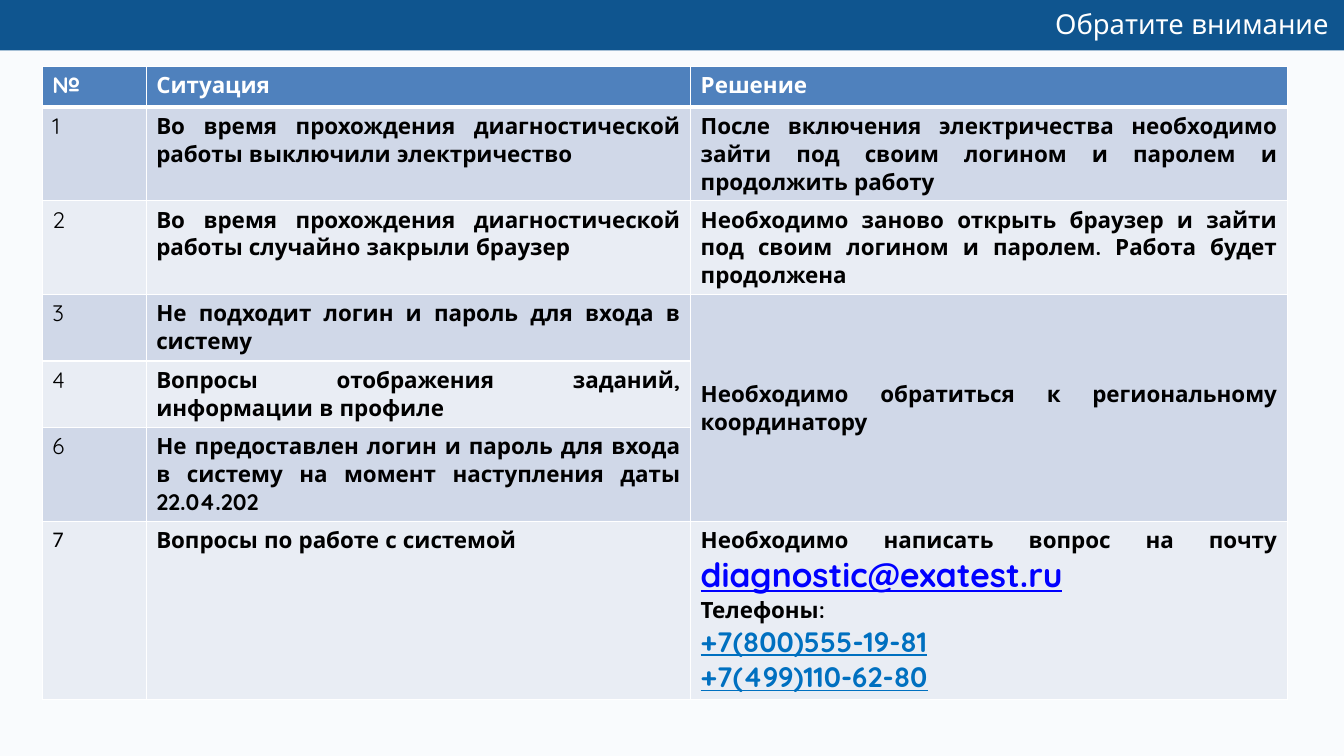
from pptx import Presentation
from pptx.dml.color import RGBColor
from pptx.enum.shapes import MSO_SHAPE
from pptx.enum.text import MSO_ANCHOR, PP_ALIGN
from pptx.oxml import parse_xml
from pptx.oxml.ns import nsdecls
from pptx.util import Inches, Pt

FONT = "Quicksand"
BLACK, WHITE = "000000", "FFFFFF"
HEADER_FILL, ODD_FILL, EVEN_FILL = "4F81BD", "D0D8E8", "E9EDF4"

# Content
heading = "Обратите внимание"
columns = ["№", "Ситуация", "Решение"]
situations = [
    ("1", "Во время прохождения диагностической работы выключили электричество"),
    ("2", "Во время прохождения диагностической работы случайно закрыли браузер"),
    ("3", "Не подходит логин и пароль для входа в систему"),
    ("4", "Вопросы отображения заданий, информации в профиле"),
    ("6", "Не предоставлен логин и пароль для входа в систему "
          "на момент наступления даты 22.04.202"),
    ("7", "Вопросы по работе с системой"),
]
# Row -> paragraphs of (text, size, colour) runs
solutions = {
    1: [[("После включения электричества необходимо зайти под своим логином "
          "и паролем и продолжить работу", 16, BLACK)]],
    2: [[("Необходимо заново открыть браузер и зайти под своим логином "
          "и паролем. Работа будет продолжена", 16, BLACK)]],
    3: [[("Необходимо обратиться к региональному координатору", 16, BLACK)]],
    6: [[("Необходимо написать вопрос на почту ", 16, BLACK),
         ("diagnostic@exatest.ru", 24, "0000FF")],
        [("Телефоны:", 16, BLACK)],
        [("+7(800)555-19-81", 20, "0070C0")],
        [("+7(499)110-62-80", 20, "0070C0")]],
}
column_widths = [1.03, 5.4, 5.92]
row_heights = [0.4, 0.93, 0.93, 0.66, 0.66, 0.93, 1.76]


def color(hex_string):
    return RGBColor.from_string(hex_string)


def set_borders(cell, bottom=1):
    properties = cell._tc.get_or_add_tcPr()
    for position, side in enumerate("LRTB"):
        width = Pt(bottom if side == "B" else 1)
        properties.insert(position, parse_xml(
            f'<a:ln{side} {nsdecls("a")} w="{width}"><a:solidFill>'
            f'<a:srgbClr val="{WHITE}"/></a:solidFill></a:ln{side}>'))


def write(cell, paragraphs, bold=True, align=PP_ALIGN.JUSTIFY, font=FONT):
    frame = cell.text_frame
    for index, runs in enumerate(paragraphs):
        paragraph = frame.add_paragraph() if index else frame.paragraphs[0]
        paragraph.alignment = align
        paragraph.font.name = font
        paragraph.font.bold = bold
        for text, size, ink in runs:
            run = paragraph.add_run()
            run.text = text
            run.font.size = Pt(size)
            run.font.color.rgb = color(ink)
            if size > 16:  # contacts are underlined
                run.font.underline = True


prs = Presentation()
prs.slide_width, prs.slide_height = Inches(13.33), Inches(7.5)
slide = prs.slides.add_slide(prs.slide_layouts[5])
slide.background.fill.solid()
slide.background.fill.fore_color.rgb = color("F9FBFD")

# Top band, placed behind the title
band = slide.shapes.add_shape(MSO_SHAPE.RECTANGLE, 0, 0, prs.slide_width, Inches(0.5))
band.shadow.inherit = False
band.fill.solid()
band.fill.fore_color.rgb = color("0F558F")
band.line.fill.background()
slide.shapes._spTree.insert(2, band._element)

# Title
title = slide.shapes.title
title.left, title.top = Inches(1.55), Inches(0.04)
title.width, title.height = Inches(11.73), Inches(0.42)
title.text_frame.text = heading
title.text_frame.vertical_anchor = MSO_ANCHOR.MIDDLE
line = title.text_frame.paragraphs[0]
line.alignment = PP_ALIGN.RIGHT
line.line_spacing = 0.9
line.font.name = FONT
line.font.size = Pt(19.6)
line.font.color.rgb = color(WHITE)

# Table grid
table = slide.shapes.add_table(
    len(row_heights), len(columns), Inches(0.42), Inches(0.66),
    Inches(sum(column_widths)), Inches(sum(row_heights))).table
for column, width in zip(table.columns, column_widths):
    column.width = Inches(width)
for row_index, (row, height) in enumerate(zip(table.rows, row_heights)):
    row.height = Inches(height)
    row_fill = ODD_FILL if row_index % 2 else EVEN_FILL
    for cell in row.cells:
        cell.fill.solid()
        cell.fill.fore_color.rgb = color(row_fill if row_index else HEADER_FILL)
        set_borders(cell, bottom=1 if row_index else 3)

# Header and body text
for column_index, label in enumerate(columns):
    write(table.cell(0, column_index), [[(label, 16, WHITE)]], align=PP_ALIGN.LEFT)
for row_index, (number, situation) in enumerate(situations, start=1):
    number_font = "Calibri" if number == "7" else FONT
    write(table.cell(row_index, 0), [[(number, 16, BLACK)]], False, PP_ALIGN.LEFT, number_font)
    write(table.cell(row_index, 1), [[(situation, 16, BLACK)]])

# Rows 3 to 5 share one solution
table.cell(3, 2).merge(table.cell(5, 2))
for row_index, paragraphs in solutions.items():
    solution = table.cell(row_index, 2)
    write(solution, paragraphs)
    if row_index >= 3:
        solution.vertical_anchor = MSO_ANCHOR.MIDDLE

prs.save("out.pptx")
